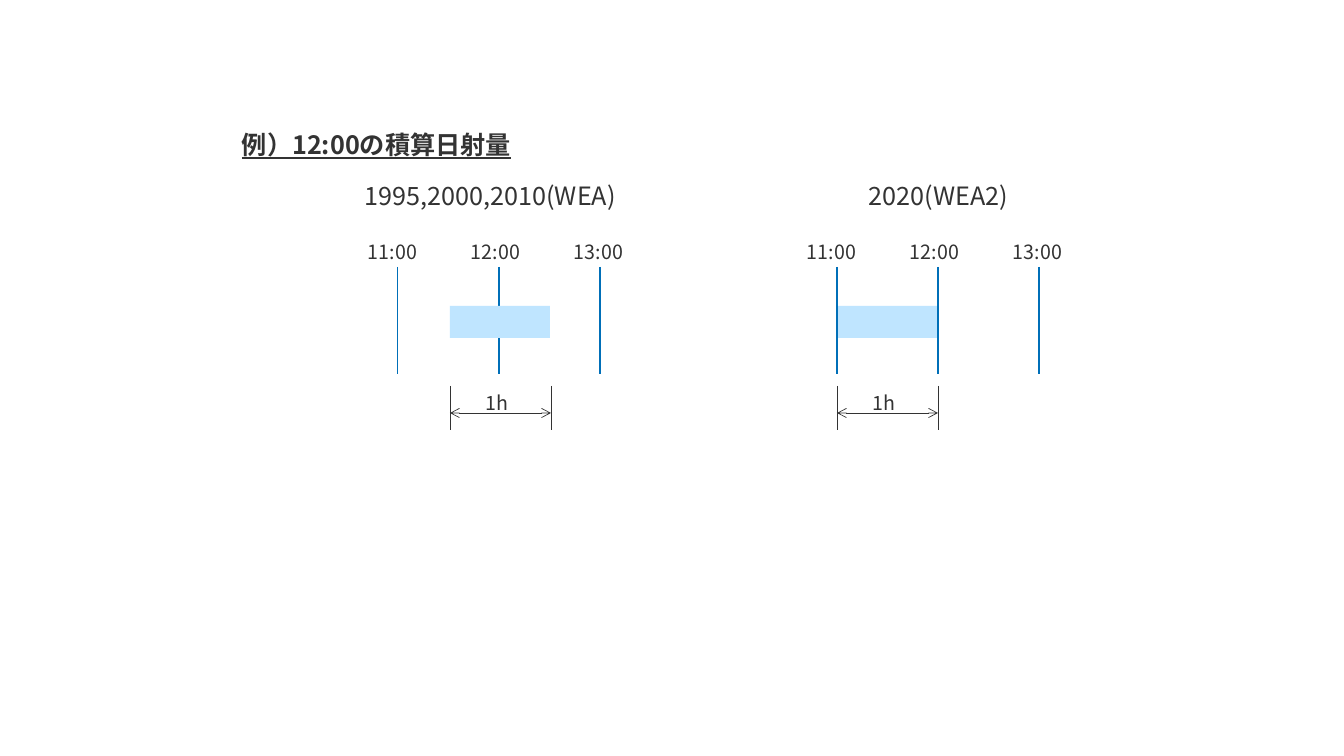
from lxml import etree
from pptx import Presentation
from pptx import util as u
from pptx.dml import color
from pptx.enum import shapes, text
from pptx.oxml import ns

PX = 914400 / 100.8
HOUR = 101
LABEL_STEP = 103
THEME = {
    "font": "Noto Sans CJK JP",
    "ink": color.RGBColor.from_string("333333"),
    "tick": color.RGBColor.from_string("006FB8"),
    "bar": color.RGBColor.from_string("BFE5FF"),
    "heading": u.Pt(18),
    "label": u.Pt(14),
    "tick_width": u.Pt(0.75),
    "dimension_width": u.Pt(0.5),
}
PANELS = [
    {"caption": "1995,2000,2010(WEA)", "caption_box": (355, 175, 307, 40),
     "align": text.PP_ALIGN.LEFT, "first_hour": 398, "first_label": 358,
     "bar_start": 450, "layers": ("ticks", "bar")},
    {"caption": "2020(WEA2)", "caption_box": (849, 175, 179, 40),
     "align": text.PP_ALIGN.CENTER, "first_hour": 837, "first_label": 797,
     "bar_start": 837, "layers": ("bar", "ticks")},
]

presentation = Presentation()
presentation.slide_width = u.Emu(round(1344 * PX))
presentation.slide_height = u.Emu(round(756 * PX))
slide = presentation.slides.add_slide(presentation.slide_layouts[6])


def add_text(words, box, size, align=text.PP_ALIGN.LEFT, **font_values):
    shape = slide.shapes.add_textbox(*(round(n * PX) for n in box))
    frame = shape.text_frame
    frame.word_wrap = False
    frame.auto_size = text.MSO_AUTO_SIZE.SHAPE_TO_FIT_TEXT
    paragraph = frame.paragraphs[0]
    paragraph.alignment = align
    run = paragraph.add_run()
    run.text = words
    for name, value in {"name": THEME["font"], "size": size, **font_values}.items():
        setattr(run.font, name, value)
    run.font.color.rgb = THEME["ink"]
    properties = run.font._element
    etree.SubElement(properties, ns.qn("a:ea")).set("typeface", THEME["font"])


def add_line(ends, line_color, width, arrows=False):
    connector = slide.shapes.add_connector(
        shapes.MSO_CONNECTOR.STRAIGHT, *(round(n * PX) for n in ends))
    connector.line.color.rgb = line_color
    connector.line.width = width
    if arrows:
        outline = connector.line._get_or_add_ln()
        for end in ("a:headEnd", "a:tailEnd"):
            etree.SubElement(outline, ns.qn(end)).set("type", "arrow")
    etree.SubElement(connector._element.spPr, ns.qn("a:effectLst"))


add_text("例）12:00の積算日射量", (232, 124, 302, 40), THEME["heading"],
         bold=True, underline=True)

for panel in PANELS:
    add_text(panel["caption"], panel["caption_box"], THEME["heading"], panel["align"])
    start = panel["bar_start"]
    end = start + HOUR

    for layer in panel["layers"]:
        if layer == "ticks":
            for index in range(3):
                x = panel["first_hour"] + index * HOUR
                add_line((x, 267, x, 374), THEME["tick"], THEME["tick_width"])
        else:
            bar = slide.shapes.add_shape(
                shapes.MSO_SHAPE.RECTANGLE,
                *(round(n * PX) for n in (start, 306, HOUR - 1, 32)))
            bar.shadow.inherit = False
            bar.fill.solid()
            bar.fill.fore_color.rgb = THEME["bar"]
            bar.line.fill.background()

    for index, hour in enumerate(("11:00", "12:00", "13:00")):
        left = panel["first_label"] + index * LABEL_STEP
        add_text(hour, (left, 235, 79, 34), THEME["label"])

    for x in (start, end):
        add_line((x, 386, x, 430), THEME["ink"], THEME["dimension_width"])
    add_line((start, 413, end, 413), THEME["ink"], THEME["dimension_width"], arrows=True)
    add_text("1h", (start + 26, 386, 45, 34), THEME["label"])

presentation.save("out.pptx")
